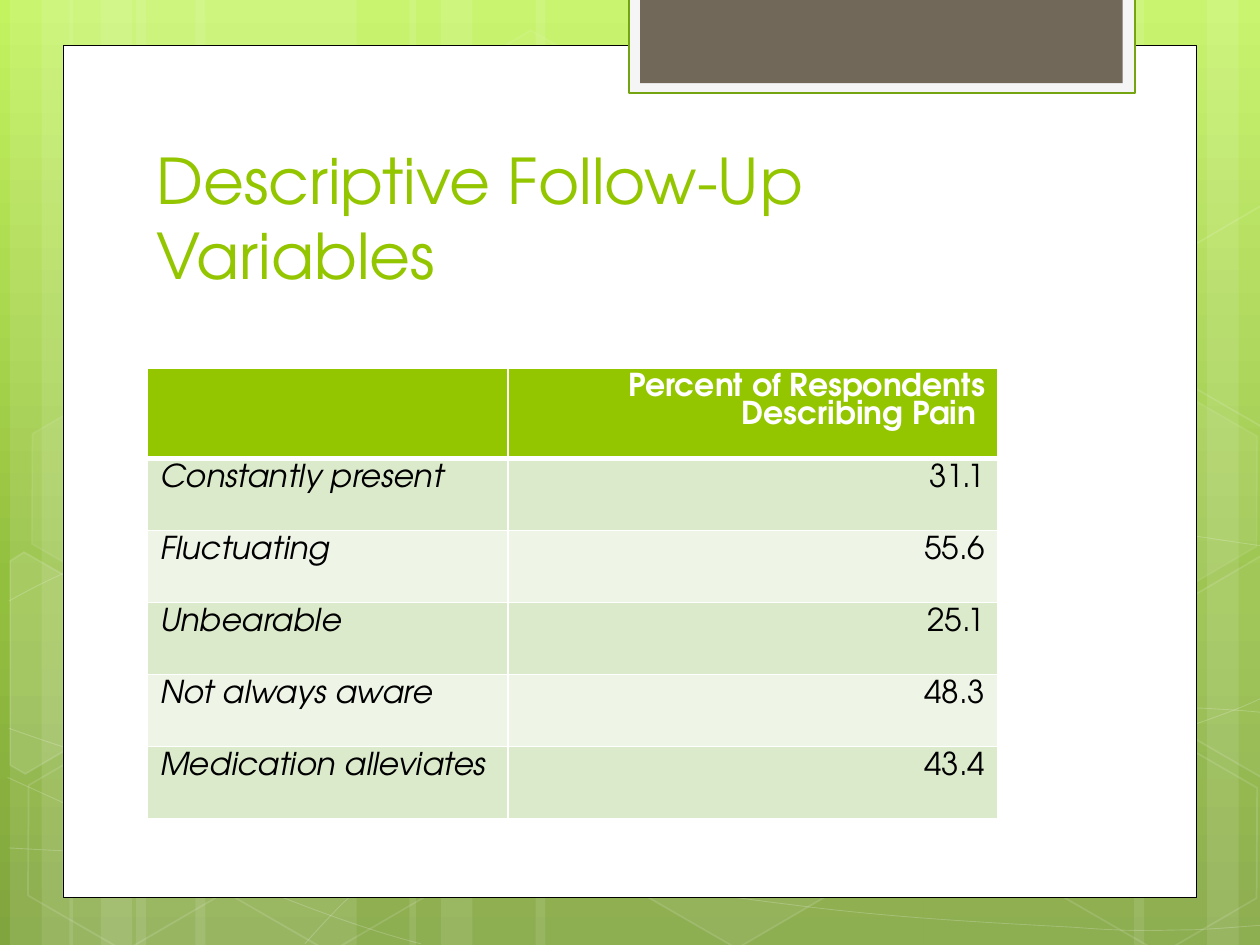
from copy import deepcopy
from math import cos, radians, sin

from lxml.etree import SubElement
from pptx import Presentation
from pptx.dml.color import RGBColor
from pptx.enum.shapes import MSO_SHAPE
from pptx.enum.text import MSO_ANCHOR, MSO_AUTO_SIZE, PP_ALIGN
from pptx.oxml.ns import qn
from pptx.util import Inches, Pt

FONT = "TeX Gyre Adventor"
WHITE = RGBColor(0xFF, 0xFF, 0xFF)
BLACK = RGBColor(0, 0, 0)
GREEN = RGBColor(0x94, 0xC6, 0x00)
DARK_GREEN = RGBColor(0x74, 0xA5, 0x10)
PALE = RGBColor(0xF5, 0xF5, 0xF5)
BROWN = RGBColor(0x71, 0x68, 0x5A)
ROW_FILLS = [RGBColor(0xDC, 0xEA, 0xCC), RGBColor(0xEE, 0xF5, 0xE7)]
BACKGROUND = [(0, RGBColor(0xC3, 0xF3, 0x5F)), (0.62, RGBColor(0x93, 0xBF, 0x3F)),
              (1, RGBColor(0x81, 0xA5, 0x3E))]

# Content
TITLE = "Descriptive Follow-Up Variables"
HEADER = ["", "Percent of Respondents Describing Pain "]
ROWS = [("Constantly present", "31.1"), ("Fluctuating", "55.6"), ("Unbearable", "25.1"),
        ("Not always aware", "48.3"), ("Medication alleviates", "43.4")]
COL_WIDTHS = [2.86, 3.89]
TABLE_HEIGHT, HEADER_HEIGHT = 3.58, 0.72
ROW_HEIGHTS = [HEADER_HEIGHT] + [(TABLE_HEIGHT - HEADER_HEIGHT) / len(ROWS)] * len(ROWS)

# Backdrop: bands are (left, width, rotation)
BANDS = [(1.08, 1.75, 0), (0.08, 0.5, 0), (0.33, 0.83, 0), (1.55, 1.75, 0), (0.55, 0.5, 0),
         (0.8, 0.83, 0), (7.33, 1.75, 180), (9.58, 0.5, 180), (9, 0.83, 180),
         (4.25, 3.08, 0), (3.25, 0.5, 0), (3.5, 0.83, 0)]
# Bezier curves: a start point, then three points for each segment
CURVES = [
    [(0.07, 6.73), (0.61, 6.76), (1.15, 6.79), (1.9, 6.78), (2.65, 6.77), (3.58, 6.75),
     (4.58, 6.65), (5.58, 6.55), (7, 6.36), (7.92, 6.17), (8.83, 5.98), (9.77, 5.68),
     (10.07, 5.51)],
    [(0.07, 4.77), (0.36, 4.61), (0.65, 4.46), (1.21, 4.31), (1.78, 4.16), (2.59, 3.94),
     (3.47, 3.87), (4.36, 3.8), (5.44, 3.79), (6.54, 3.87), (7.64, 3.95), (9.47, 4.26),
     (10.07, 4.34)],
    [(0.06, 6.17), (1.27, 6.72), (2.47, 7.27), (3.34, 7.49)],
    [(0.07, 5.78), (0.38, 5.89), (0.7, 6), (1.28, 6.16), (1.86, 6.31), (2.73, 6.56),
     (3.57, 6.73), (4.4, 6.9), (5.45, 7.08), (6.28, 7.18), (7.11, 7.29), (8, 7.33),
     (8.53, 7.36), (9.05, 7.4), (9.19, 7.38), (9.45, 7.38), (9.71, 7.37), (9.89, 7.35),
     (10.07, 7.34)],
    [(2.42, 7.49), (2.6, 7.29), (2.78, 7.09), (3.02, 6.91), (3.26, 6.73), (3.6, 6.53),
     (3.88, 6.39), (4.16, 6.25), (4.33, 6.19), (4.7, 6.09), (5.06, 5.99), (5.73, 5.85),
     (6.08, 5.78), (6.44, 5.71), (6.49, 5.71), (6.8, 5.69), (7.11, 5.66), (7.6, 5.63),
     (7.94, 5.62), (8.29, 5.61), (8.86, 5.62), (8.86, 5.62), (9.1, 5.62), (9.3, 5.62),
     (9.53, 5.62), (9.71, 5.63), (9.88, 5.64), (9.97, 5.65), (10.06, 5.66), (10.03, 5.65),
     (10.06, 5.66)],
]
TILT = 30
# Hexagons: left, top, fill opacity (None for no fill), line opacity
HEXAGONS = [(3.34, 0.36, 4, 8), (4.97, 5.89, 6, 12), (0.11, 5.91, None, 12),
            (0.14, 3.12, 7, 8), (1.74, 5.92, None, 12), (7.53, 4.53, 10, 12),
            (8.34, 5.93, None, 12), (8.34, 3.14, 7, 8)]
# Hexagons cut by the slide edge: centre of tilt, points, fill opacity
CUT_HEXAGONS = [
    ((0.36, 5.35), [(0.08, 4.45), (0.19, 4.38), (0.96, 4.82), (0.95, 5.7), (0.2, 6.14),
                    (0.08, 6.07)], 10),
    ((9.85, 5.2), [(9.26, 4.85), (10.01, 4.41), (10.09, 4.46), (10.09, 6.13), (10.02, 6.17),
                   (9.26, 5.73)], 4),
    ((9.85, 2.41), [(9.26, 2.07), (10.01, 1.63), (10.1, 1.68), (10.09, 3.35), (10.02, 3.39),
                    (9.26, 2.95)], None),
]
# Panels: left, top, width, height, fill, line colour, line width
PANELS = [(0.5, 0.36, 9, 6.76, WHITE, BLACK, 0.5),
          (4.99, -0.02, 4.02, 0.76, PALE, DARK_GREEN, 1.25),
          (5.08, -0.02, 3.83, 0.68, BROWN, None, 0)]


def set_color(fill, color, opacity):
    fill.solid()
    fill.fore_color.rgb = color
    if opacity < 100:
        clr = fill._xPr.find(qn("a:solidFill"))[0]
        SubElement(clr, qn("a:alpha"), val=str(opacity * 1000))


def paint(sp, fill=None, opacity=100, line=None, width=1, line_opacity=100):
    sp.shadow.inherit = False
    if fill is None or opacity is None:
        sp.fill.background()
    else:
        set_color(sp.fill, fill, opacity)
    if line is None:
        sp.line.fill.background()
    else:
        sp.line.width = Pt(width)
        set_color(sp.line.fill, line, line_opacity)


def add_shape(kind, *box):
    return s.shapes.add_shape(kind, *map(Inches, box))


def add_outline(points, close):
    pts = [(Inches(x), Inches(y)) for x, y in points]
    builder = s.shapes.build_freeform(*pts[0])
    builder.add_line_segments(pts[1:], close=close)
    return builder.convert_to_shape()


def add_curve(points):
    """Turn every three straight segments into one cubic segment."""
    sp = add_outline(points, False)
    outline = sp._element.find(".//" + qn("a:path"))
    lines = outline.findall(qn("a:lnTo"))
    for i in range(0, len(lines), 3):
        cubic = SubElement(outline, qn("a:cubicBezTo"))
        for line in lines[i:i + 3]:
            cubic.append(line[0])
            outline.remove(line)
    return sp


def untilt(point, centre):
    a = radians(-TILT)
    dx, dy = point[0] - centre[0], point[1] - centre[1]
    return centre[0] + dx * cos(a) - dy * sin(a), centre[1] + dx * sin(a) + dy * cos(a)


def write(p, text, **font):
    r = p.add_run()
    r.text = text
    color = font.pop("color")
    for name, value in font.items():
        setattr(r.font, name, value)
    r.font.name = FONT
    r.font.color.rgb = color


def set_borders(cell, top=1, bottom=1):
    for side, width in (("L", 1), ("R", 1), ("T", top), ("B", bottom)):
        ln = SubElement(cell._tc.get_or_add_tcPr(), qn("a:ln" + side), w=str(Pt(width)))
        SubElement(SubElement(ln, qn("a:solidFill")), qn("a:srgbClr"), val=str(WHITE))


prs = Presentation()
prs.slide_width, prs.slide_height = Inches(10), Inches(7.5)
s = prs.slides.add_slide(prs.slide_layouts[5])

# Background gradient
bg = s.background.fill
bg.gradient()
bg.gradient_angle = 270
stop_list = s._element.find(".//" + qn("a:gsLst"))
stop_list.append(deepcopy(stop_list[0]))
for stop, (position, color) in zip(bg.gradient_stops, BACKGROUND):
    stop.position = position
    stop.color.rgb = color

# Backdrop pattern
for left, width, rotation in BANDS:
    sp = add_shape(MSO_SHAPE.RECTANGLE, left, 0, width, 7.5)
    sp.rotation = rotation
    paint(sp, WHITE, 10)
for curve in CURVES:
    paint(add_curve(curve), line=WHITE, width=0.5, line_opacity=20)
for left, top, opacity, line_opacity in HEXAGONS:
    sp = add_shape(MSO_SHAPE.HEXAGON, left, top, 1.75, 1.52)
    sp.adjustments[0] = 0.285
    sp.rotation = TILT
    paint(sp, WHITE, opacity, WHITE, 1, line_opacity)
for centre, points, opacity in CUT_HEXAGONS:
    sp = add_outline([untilt(pt, centre) for pt in points], True)
    sp.rotation = TILT
    paint(sp, WHITE, opacity, WHITE, 1, 12)

# Panels
for *box, fill, line, width in PANELS:
    paint(add_shape(MSO_SHAPE.RECTANGLE, *box), fill, line=line, width=width)

# Title, brought in front of the panels
title = s.shapes.title
s.shapes._spTree.append(title._element)
title.left, title.top, title.width, title.height = map(Inches, (1.14, 1.12, 7.68, 1.25))
tf = title.text_frame
for name, value in {"word_wrap": True, "auto_size": MSO_AUTO_SIZE.NONE,
                    "vertical_anchor": MSO_ANCHOR.BOTTOM}.items():
    setattr(tf, name, value)
tf.paragraphs[0].alignment = PP_ALIGN.LEFT
write(tf.paragraphs[0], TITLE, size=Pt(36), color=GREEN)

# Table
table = s.shapes.add_table(len(ROW_HEIGHTS), 2, Inches(1.17), Inches(2.92),
                           Inches(sum(COL_WIDTHS)), Inches(TABLE_HEIGHT)).table
for column, width in zip(table.columns, COL_WIDTHS):
    column.width = Inches(width)
for i, (height, texts) in enumerate(zip(ROW_HEIGHTS, [HEADER, *ROWS])):
    table.rows[i].height = Inches(height)
    head = i == 0
    for j, text in enumerate(texts):
        cell = table.cell(i, j)
        set_borders(cell, top=3 if i == 1 else 1, bottom=3 if head else 1)
        cell.fill.solid()
        cell.fill.fore_color.rgb = GREEN if head else ROW_FILLS[(i - 1) % 2]
        p = cell.text_frame.paragraphs[0]
        p.line_spacing = 0.95
        p.alignment = PP_ALIGN.RIGHT if j else PP_ALIGN.LEFT
        if head and j:
            p.level = 1
            p._p.get_or_add_pPr().set("marL", str(Inches(0.5)))
        if text:
            write(p, text, size=Pt(18), bold=head, italic=not head and j == 0,
                  color=WHITE if head else BLACK)

prs.save("out.pptx")
